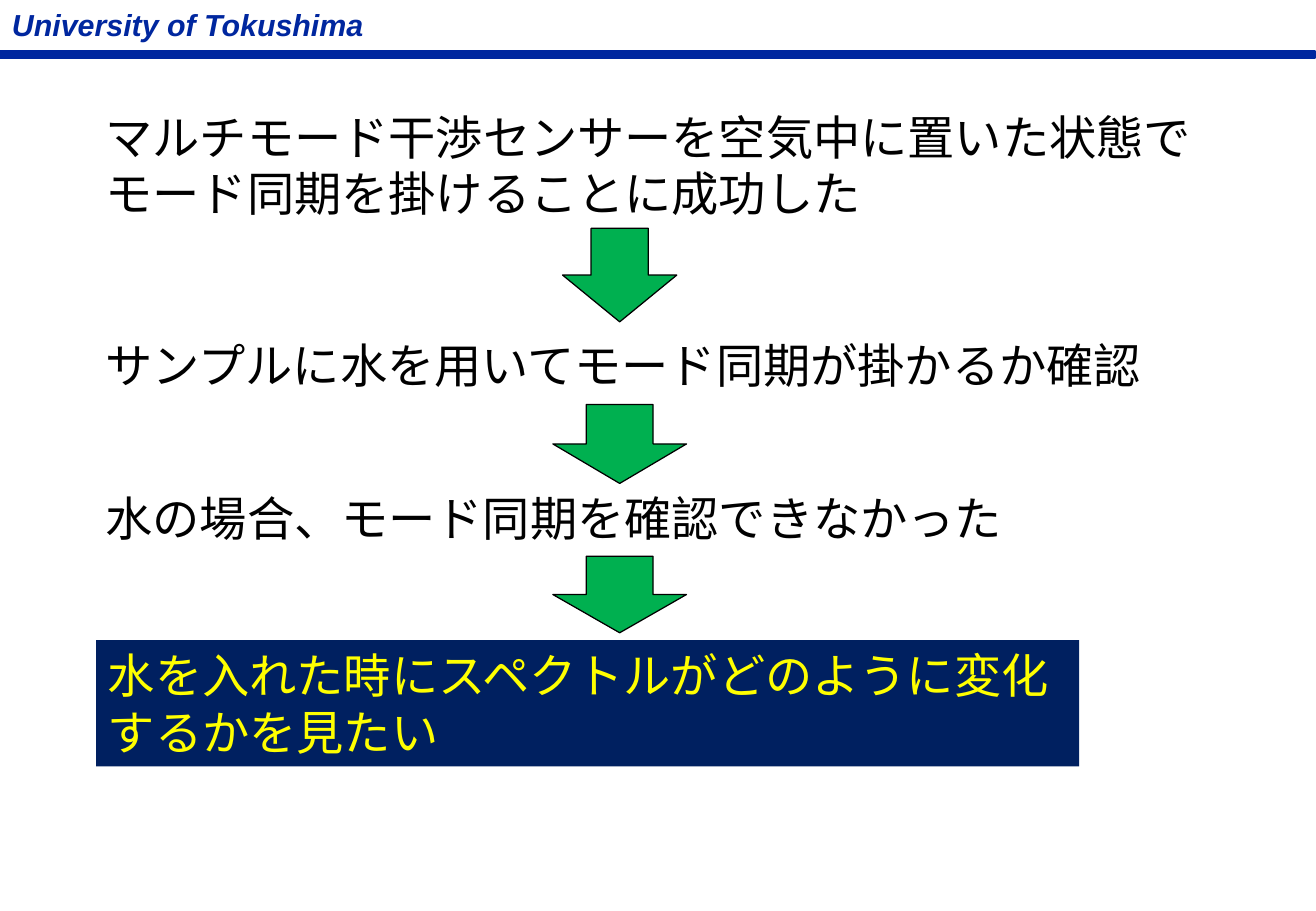
from pptx import Presentation
from pptx.dml.color import RGBColor
from pptx.enum.shapes import MSO_SHAPE
from pptx.enum.text import MSO_ANCHOR, PP_ALIGN
from pptx.util import Emu, Pt

PX = 9144  # 100 px to the inch
FONT = "Arial"
BLUE, NAVY, GREEN = "00279F", "002060", "00B050"
BLACK, YELLOW = "000000", "FFFF00"

STATEMENTS = [
    ("マルチモード干渉センサーを空気中に置いた状態でモード同期を掛けることに成功した", (77, 84, 921, 104)),
    ("サンプルに水を用いてモード同期が掛かるか確認", (77, 272, 992, 57)),
    ("水の場合、モード同期を確認できなかった", (77, 398, 906, 57)),
]
GOAL = "水を入れた時にスペクトルがどのように変化するかを見たい"
ARROW_CENTER = 510
ARROWS = [(188, 94, 77), (333, 110, 65), (458, 110, 63)]  # top, width, height


def px(*lengths):
    return [Emu(length * PX) for length in lengths]


def color(hex_string):
    return RGBColor.from_string(hex_string)


def write(shape, text, size, text_color, bold=False, italic=False, wrap=True):
    frame = shape.text_frame
    frame.word_wrap = wrap
    frame.vertical_anchor = MSO_ANCHOR.TOP
    para = frame.paragraphs[0]
    para.alignment = PP_ALIGN.LEFT
    span = para.add_run()
    span.text = text
    span.font.name = FONT
    span.font.size = Pt(size)
    span.font.bold = bold
    span.font.italic = italic
    span.font.color.rgb = color(text_color)


def add_text(page, bounds, text, size, text_color, **style):
    box = page.shapes.add_textbox(*px(*bounds))
    write(box, text, size, text_color, **style)


def add_filled(page, kind, bounds, fill, line=None, line_width=0.75):
    shape = page.shapes.add_shape(kind, *px(*bounds))
    shape.shadow.inherit = False
    shape.fill.solid()
    shape.fill.fore_color.rgb = color(fill)
    if line:
        shape.line.color.rgb = color(line)
        shape.line.width = Pt(line_width)
    else:
        shape.line.fill.background()
    return shape


def add_header(page):
    add_filled(page, MSO_SHAPE.RECTANGLE, (0, 42, 1082, 6), BLUE, BLUE, 1)
    add_text(page, (0, 0, 318, 40), "University of Tokushima", 18, BLUE,
             bold=True, italic=True, wrap=False)


def add_down_arrow(page, top, width, height):
    left = ARROW_CENTER - width // 2
    add_filled(page, MSO_SHAPE.DOWN_ARROW, (left, top, width, height), GREEN, BLACK)


def main():
    deck = Presentation()
    deck.slide_width, deck.slide_height = px(1083, 750)
    page = deck.slides.add_slide(deck.slide_layouts[6])
    add_header(page)
    for (text, bounds), arrow in zip(STATEMENTS, ARROWS):
        add_text(page, bounds, text, 28, BLACK)
        add_down_arrow(page, *arrow)
    goal = add_filled(page, MSO_SHAPE.RECTANGLE, (79, 527, 809, 104), NAVY)
    write(goal, GOAL, 28, YELLOW)
    deck.save("out.pptx")


if __name__ == "__main__":
    main()
